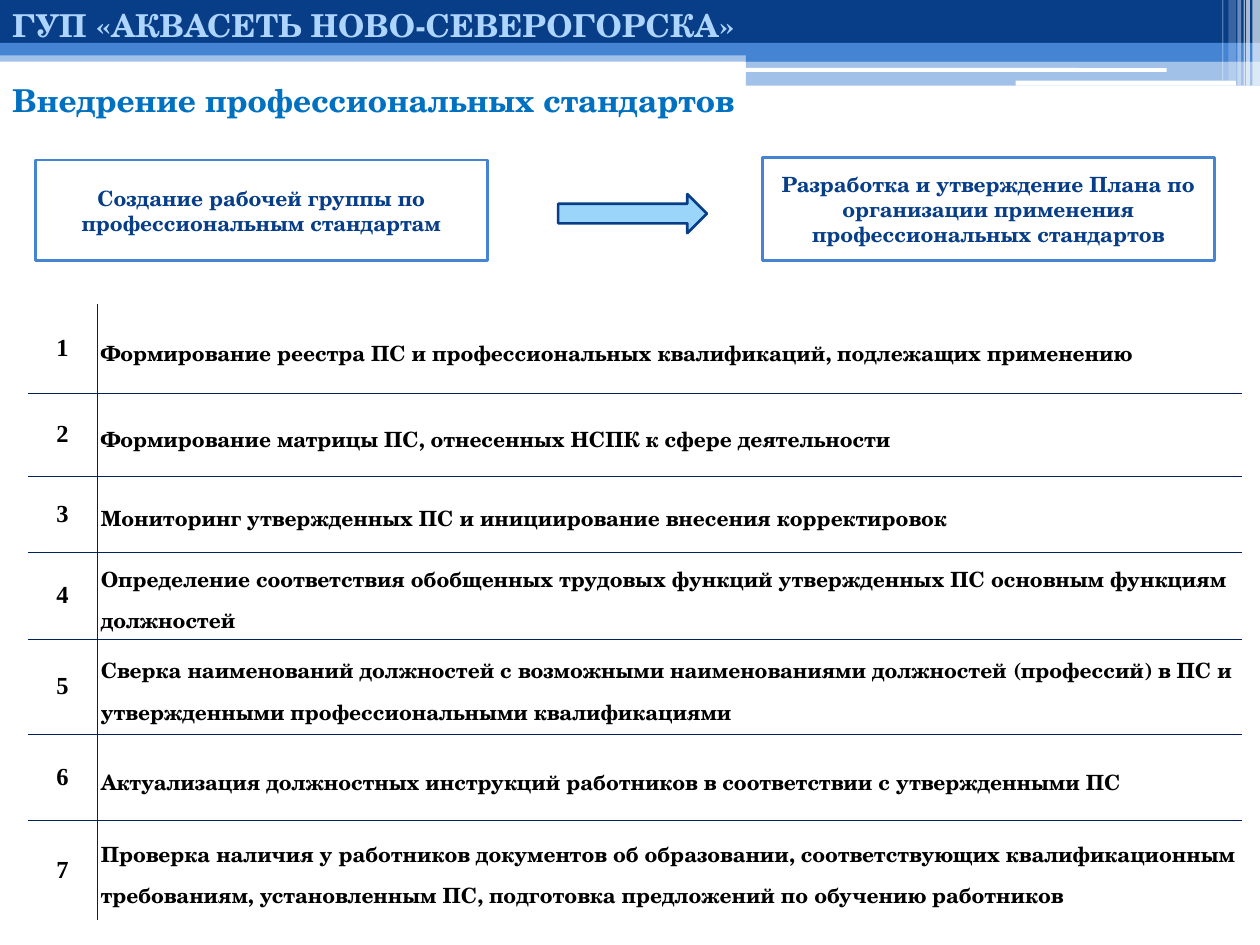
from lxml import etree
from pptx import Presentation
from pptx.dml.color import RGBColor
from pptx.enum.shapes import MSO_SHAPE
from pptx.enum.text import MSO_ANCHOR, PP_ALIGN
from pptx.oxml.ns import qn
from pptx.util import Inches, Pt

COLORS = {
    "navy": "073E87", "blue": "4584D3", "sky": "9BD5FA", "pale": "AED5FF",
    "title": "0070C0", "border": "002060", "white": "FFFFFF", "black": "000000",
}
SERIF = "TeX Gyre Schola"
TIMES = "Times New Roman"

# Header parts: left, top, width, height, colour, opacity in percent
BANDS = [
    (0, 0.4, 10, 0.09, "blue", 50),
    (0, 0, 10, 0.34, "navy", 100),
    (0, 0.34, 10, 0.1, "blue", 100),
    (5.92, 0.39, 4.08, 0.1, "blue", 100),
    (5.92, 0.48, 4.08, 0.2, "blue", 50),
]
SLOTS = [(5.91, 0.54, 3.35, 0.03), (8.06, 0.64, 1.75, 0.04)]
# Vertical stripes: left, width, height, opacity in percent
STRIPES = [
    (9.94, 0.06, 0.68, 65), (9.89, 0.03, 0.68, 65), (9.87, 0.01, 0.68, 60),
    (9.82, 0.03, 0.68, 40), (9.75, 0.06, 0.64, 20), (9.7, 0.01, 0.64, 30),
]

# Row height and text of each step
STEPS = [
    (0.71, "Формирование реестра ПС и профессиональных квалификаций, подлежащих применению"),
    (0.66, "Формирование матрицы ПС, отнесенных НСПК к сфере деятельности"),
    (0.6, "Мониторинг утвержденных ПС и инициирование внесения корректировок"),
    (0.69, "Определение соответствия обобщенных трудовых функций утвержденных ПС "
           "основным функциям должностей"),
    (0.76, "Сверка наименований должностей с возможными наименованиями должностей "
           "(профессий) в ПС и утвержденными профессиональными квалификациями"),
    (0.68, "Актуализация должностных инструкций работников в соответствии с утвержденными ПС"),
    (0.79, "Проверка наличия у работников документов об образовании, соответствующих "
           "квалификационным требованиям, установленным ПС, подготовка предложений "
           "по обучению работников"),
]


def rgb(name):
    return RGBColor.from_string(COLORS[name])


def write(tf, text, color, align=PP_ALIGN.LEFT, spacing=None, **font):
    p = tf.paragraphs[0]
    p.alignment = align
    if spacing:
        p.line_spacing = spacing
    r = p.add_run()
    r.text = text
    for key, value in {"name": SERIF, "size": Pt(12), "bold": True, **font}.items():
        setattr(r.font, key, value)
    r.font.color.rgb = rgb(color)


def add_block(s, box, fill, kind=MSO_SHAPE.RECTANGLE, line=None, opacity=100):
    sp = s.shapes.add_shape(kind, *map(Inches, box))
    sp.shadow.inherit = False
    sp.fill.solid()
    sp.fill.fore_color.rgb = rgb(fill)
    if opacity < 100:
        color = sp.fill._xPr.find(".//" + qn("a:srgbClr"))
        etree.SubElement(color, qn("a:alpha")).set("val", str(opacity * 1000))
    if line:
        sp.line.color.rgb = rgb(line)
        sp.line.width = Pt(1.5)
    else:
        sp.line.fill.background()
    return sp


def add_header(s):
    for *box, color, opacity in BANDS:
        add_block(s, box, color, opacity=opacity)
    for box in SLOTS:
        add_block(s, box, "white", MSO_SHAPE.ROUNDED_RECTANGLE)
    for left, width, height, opacity in STRIPES:
        add_block(s, (left, 0, width, height), "white", opacity=opacity)


def add_heading(s, box, text, color):
    tf = s.shapes.add_textbox(*map(Inches, box)).text_frame
    tf.word_wrap = False
    write(tf, text, color, size=Pt(18))


def add_stage(s, box, text):
    tf = add_block(s, box, "white", line="blue").text_frame
    tf.word_wrap = True
    tf.vertical_anchor = MSO_ANCHOR.MIDDLE
    write(tf, text, "navy", PP_ALIGN.CENTER)


def set_borders(cell, shown):
    """Draw the named sides (L, R, T, B) and hide the others."""
    tc_pr = cell._tc.get_or_add_tcPr()
    for i, side in enumerate("LRTB"):
        ln = etree.Element(qn("a:ln" + side), w=str(Pt(0.25)))
        if side in shown:
            fill = etree.SubElement(ln, qn("a:solidFill"))
            etree.SubElement(fill, qn("a:srgbClr")).set("val", COLORS["border"])
        else:
            etree.SubElement(ln, qn("a:noFill"))
        tc_pr.insert(i, ln)


def add_steps(s, left, top, widths):
    last = len(STEPS) - 1
    height = sum(h for h, _ in STEPS)
    box = (left, top, sum(widths), height)
    table = s.shapes.add_table(len(STEPS), 2, *map(Inches, box)).table
    table.first_row = table.horz_banding = False
    for col, width in zip(table.columns, widths):
        col.width = Inches(width)

    cell_format = {
        "vertical_anchor": MSO_ANCHOR.MIDDLE,
        "margin_left": Inches(0.03), "margin_right": Inches(0.03),
        "margin_top": 0, "margin_bottom": 0,
    }
    for i, (row_height, text) in enumerate(STEPS):
        table.rows[i].height = Inches(row_height)
        number, step = table.cell(i, 0), table.cell(i, 1)
        write(number.text_frame, str(i + 1), "black", PP_ALIGN.CENTER,
              name=TIMES, size=Pt(14))
        write(step.text_frame, text, "black", spacing=1.28)
        # Only the inner grid lines show
        rules = ("T" if i > 0 else "") + ("B" if i < last else "")
        for cell, side in ((number, "R"), (step, "L")):
            for key, value in cell_format.items():
                setattr(cell, key, value)
            cell.fill.background()
            set_borders(cell, side + rules)


def main():
    prs = Presentation()
    prs.slide_width, prs.slide_height = Inches(10), Inches(7.5)
    s = prs.slides.add_slide(prs.slide_layouts[6])

    add_header(s)
    # Two stages, then the headings
    add_stage(s, (0.28, 1.27, 3.59, 0.8),
              "Создание рабочей группы по профессиональным стандартам")
    add_stage(s, (6.05, 1.25, 3.59, 0.82),
              "Разработка и утверждение Плана по организации применения "
              "профессиональных стандартов")
    add_heading(s, (0, 0, 5.97, 0.4), "ГУП «АКВАСЕТЬ НОВО-СЕВЕРОГОРСКА»", "pale")
    add_heading(s, (0, 0.59, 6.03, 0.4), "Внедрение профессиональных стандартов", "title")
    # Numbered steps
    add_steps(s, 0.22, 2.41, (0.55, 9.09))
    # Arrow between the stages
    add_block(s, (4.43, 1.54, 1.18, 0.31), "sky", MSO_SHAPE.RIGHT_ARROW, line="navy")

    prs.save("out.pptx")


if __name__ == "__main__":
    main()
